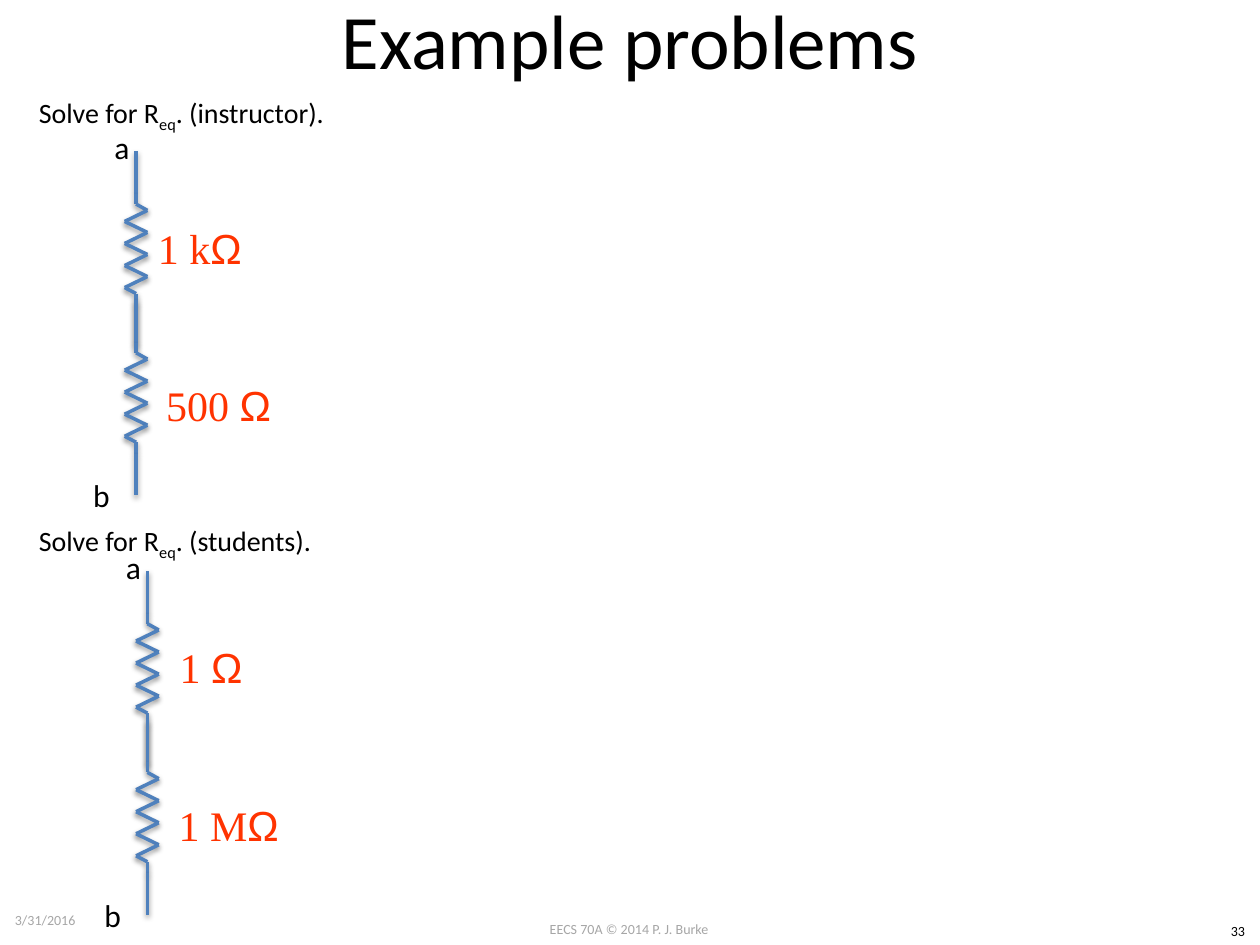
from dataclasses import dataclass
from lxml import etree
from pptx import Presentation
from pptx import util as u
from pptx.dml import color
from pptx.enum import shapes, text
from pptx.oxml import ns

HUES = {"ink": "000000", "gray": "A6A6A6", "wire": "4F81BD", "value": "FF3300"}
LEFT, MID = text.PP_ALIGN.LEFT, text.PP_ALIGN.CENTER


@dataclass
class Piece:
    words: str
    font: str = ""
    base: int = 0


@dataclass
class Label:
    x: float
    y: float
    w: float
    h: float
    bits: list[Piece]
    size: int
    hue: str = "ink"
    align: text.PP_ALIGN = LEFT
    grow: bool = False
    wrap: bool = True
    font: str = "Calibri"


@dataclass
class Circuit:
    x: float
    y: float
    task_y: float
    task_w: float
    who: str
    values: list[tuple[str, float]]


def paint(fill, hue: str) -> None:
    fill.rgb = color.RGBColor.from_string(HUES[hue])


def write(slide, item: Label) -> None:
    box = slide.shapes.add_textbox(*map(u.Inches, (item.x, item.y, item.w, item.h)))
    frame = box.text_frame
    frame.word_wrap = item.wrap
    if item.grow:
        frame.auto_size = text.MSO_AUTO_SIZE.SHAPE_TO_FIT_TEXT
    else:
        frame.vertical_anchor = text.MSO_ANCHOR.MIDDLE
    para = frame.paragraphs[0]
    para.alignment = item.align
    para.font.size = u.Pt(item.size)
    para.font.name = item.font
    paint(para.font.color, item.hue)
    for bit in item.bits:
        run = para.add_run()
        run.text = bit.words
        if bit.font:
            run.font.name = bit.font
        if bit.base:
            run.font._element.set("baseline", str(bit.base * 1000))


def shade(line) -> None:
    effects = etree.SubElement(line._element.spPr, ns.qn("a:effectLst"))
    cast = etree.SubElement(effects, ns.qn("a:outerShdw"), blurRad=str(u.Pt(3.1)),
                            dist=str(u.Pt(1.6)), dir="5400000", rotWithShape="0")
    tint = etree.SubElement(cast, ns.qn("a:srgbClr"), val=HUES["ink"])
    etree.SubElement(tint, ns.qn("a:alpha"), val="38000")


def resist(slide, x: float, y: float) -> None:
    half, step = 0.09, 0.7 / 8
    zigs = [(half if i % 2 == 0 else -half, 0.47 + i * step) for i in range(8)]
    route = [(0, 0), (0, 0.34), (0, 0.42), *zigs, (0, 1.13), (0, 1.22), (0, 1.55)]
    group = slide.shapes.add_group_shape()
    for (ax, ay), (bx, by) in zip(route, route[1:]):
        ends = map(u.Inches, (x + ax, y + ay, x + bx, y + by))
        line = group.shapes.add_connector(shapes.MSO_CONNECTOR.STRAIGHT, *ends)
        line.line.width = u.Pt(2)
        paint(line.line.color, "wire")
        shade(line)


def draw(slide, item: Circuit) -> None:
    task = [Piece("Solve for R"), Piece("eq", base=-25), Piece(f". ({item.who}).")]
    write(slide, Label(0.21, item.task_y, item.task_w, 0.37, task, 16, grow=True, wrap=False))
    for name, dx, dy, w in (("a", -0.27, -0.23, 0.32), ("b", -0.44, 2.53, 0.34)):
        write(slide, Label(item.x + dx, item.y + dy, w, 0.4, [Piece(name)], 18,
                           grow=True, wrap=False))
    for i, (value, dx) in enumerate(item.values):
        resist(slide, item.x, item.y + i * 1.18)
        bits = [Piece(value), Piece("Ω", "Arial")]
        write(slide, Label(item.x + dx, item.y + 0.4 + i * 1.25, 1.19, 0.73, bits, 24,
                           "value", MID, font="Times New Roman"))


def main() -> None:
    deck = Presentation()
    deck.slide_width, deck.slide_height = u.Inches(10), u.Inches(7.5)
    slide = deck.slides.add_slide(deck.slide_layouts[6])
    labels = [
        Label(3.83, 7.26, 2.33, 0.24, [Piece("EECS 70A © 2014 P. J. Burke")], 8,
              "gray", MID, grow=True),
        Label(9.65, 7.27, 0.35, 0.24, [Piece("33")], 8, align=MID, grow=True),
        Label(0.5, -0.32, 9, 1.25, [Piece("Example problems")], 44, align=MID),
        Label(0.02, 7.1, 2.33, 0.4, [Piece("3/31/2016")], 8, "gray"),
    ]
    circuits = [
        Circuit(1.08, 1.2, 0.71, 2.59, "instructor", [("1 k", -0.09), ("500 ", 0.06)]),
        Circuit(1.17, 4.53, 4.11, 2.41, "students", [("1 ", -0.09), ("1 M", 0.05)]),
    ]
    for item in labels:
        write(slide, item)
    for item in circuits:
        draw(slide, item)
    deck.save("out.pptx")


if __name__ == "__main__":
    main()
